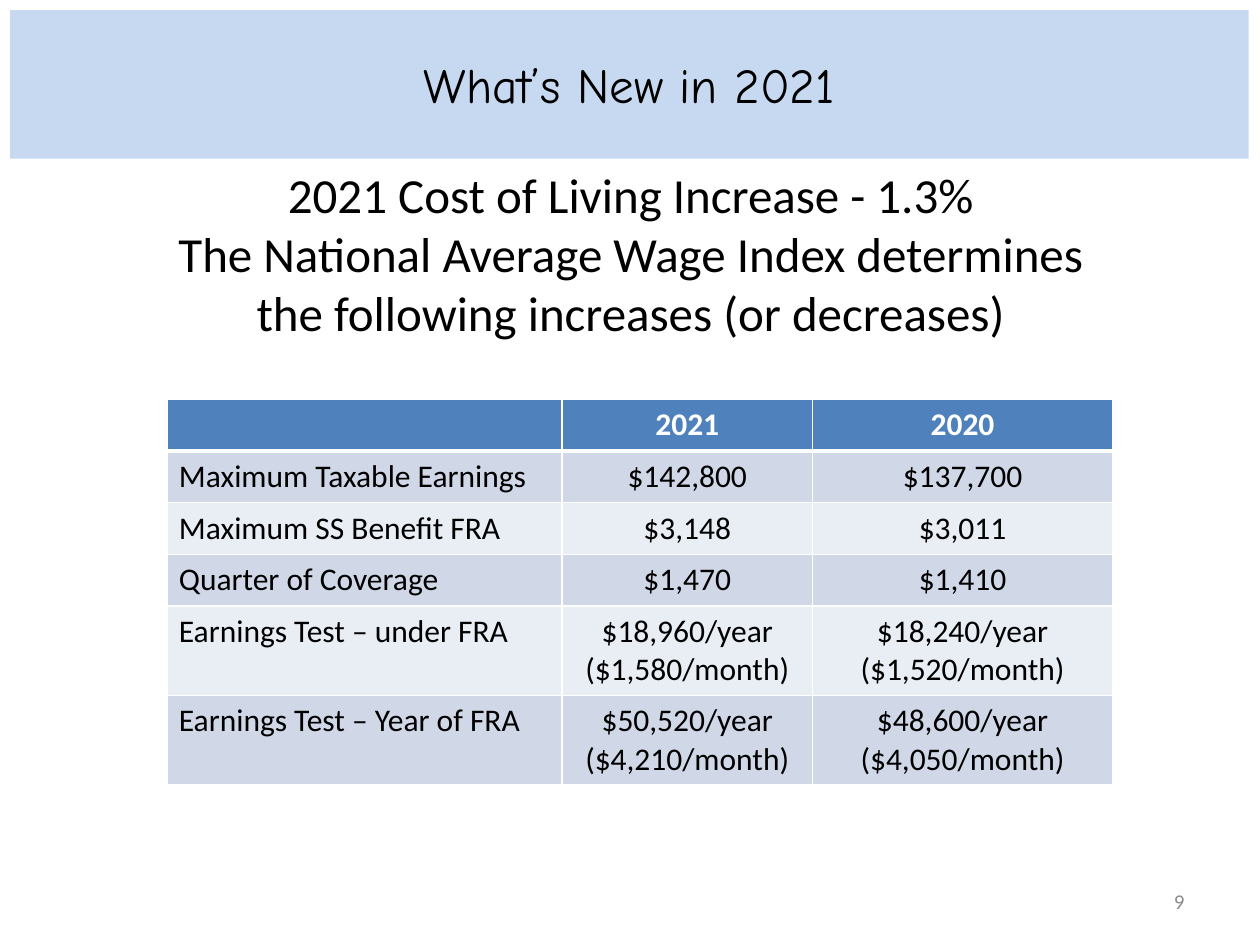
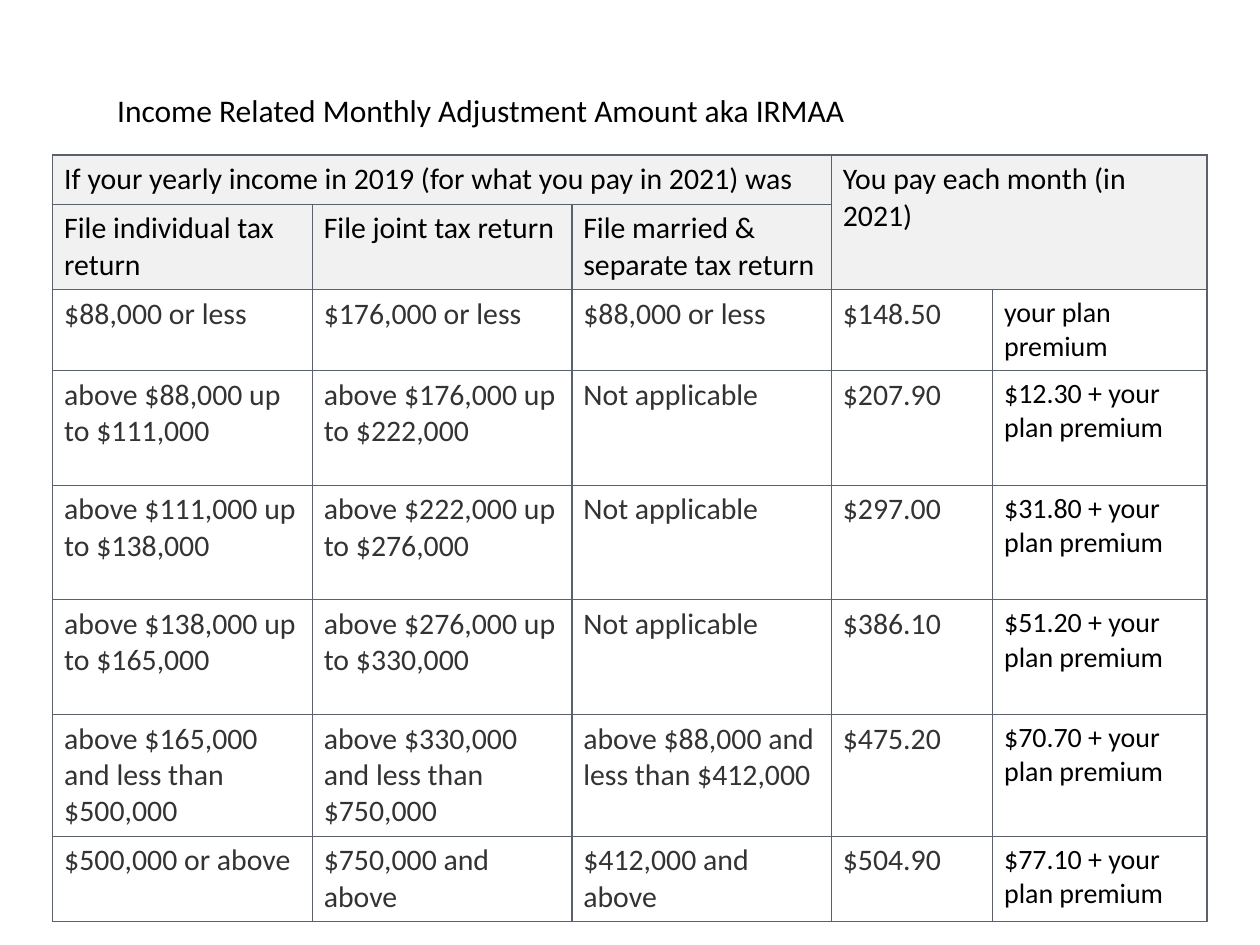
"""Build two slides on yearly benefit changes and income related premiums."""
from dataclasses import dataclass

from lxml.etree import SubElement
from pptx import Presentation
from pptx.dml.color import RGBColor as RGB
from pptx.enum.text import MSO_ANCHOR as Anchor, MSO_AUTO_SIZE as Auto, PP_ALIGN as Align
from pptx.oxml.ns import qn
from pptx.util import Inches, Pt

RATES = [
    ("", "2021", "2020"),
    ("Maximum Taxable Earnings", "$142,800", "$137,700"),
    ("Maximum SS Benefit FRA", "$3,148", "$3,011"),
    ("Quarter of Coverage", "$1,470", "$1,410"),
    ("Earnings Test – under FRA", "$18,960/year\n($1,580/month)", "$18,240/year\n($1,520/month)"),
    ("Earnings Test – Year of FRA", "$50,520/year\n($4,210/month)", "$48,600/year\n($4,050/month)"),
]
INTRO = """2021 Cost of Living Increase - 1.3%
The National Average Wage Index determines
the following increases (or decreases)"""

PLAN = "your plan premium"
INCOME = [
    ("If your yearly income in 2019 (for what you pay in 2021) was", "", "",
     "You pay each month (in 2021)", ""),
    ("File individual tax return", "File joint tax return",
     "File married & separate tax return", "", ""),
    ("$88,000 or less", "$176,000 or less", "$88,000 or less", "$148.50", PLAN),
    ("above $88,000 up to $111,000", "above $176,000 up to $222,000",
     "Not applicable", "$207.90", f"$12.30 + {PLAN}"),
    ("above $111,000 up to $138,000", "above $222,000 up to $276,000",
     "Not applicable", "$297.00", f"$31.80 + {PLAN}"),
    ("above $138,000 up to $165,000", "above $276,000 up to $330,000",
     "Not applicable", "$386.10", f"$51.20 + {PLAN}"),
    ("above $165,000 and less than $500,000", "above $330,000 and less than $750,000",
     "above $88,000 and less than $412,000", "$475.20", f"$70.70 + {PLAN}"),
    ("$500,000 or above", "$750,000 and above", "$412,000 and above",
     "$504.90", f"$77.10 + {PLAN}"),
]


@dataclass(frozen=True)
class Theme:
    """Colours, fonts and type sizes."""
    body: str = "Calibri"
    fancy: str = "Comic Neue"
    ink: str = "000000"
    soft: str = "333333"
    gray: str = "8C8C8C"
    white: str = "FFFFFF"
    band: str = "C6D9F1"
    head: str = "4F81BD"
    odd: str = "D0D8E8"
    even: str = "E9EDF4"
    pale: str = "F1F1F1"
    rule: str = "5B616B"
    big: int = 28
    text: int = 18
    dense: int = 17
    small: int = 16
    note: int = 12


T = Theme()


def write(frame, text, size=T.text, color=T.ink, align=Align.LEFT, font=T.body, bold=False):
    """Fill a text frame with evenly styled paragraphs."""
    frame.text = text
    for para in frame.paragraphs:
        para.alignment = align
        face = para.font
        face.name, face.size, face.bold = font, Pt(size), bold
        face.color.rgb = RGB.from_string(color)


def place(shape, box, anchor=Anchor.TOP):
    """Set the bounds of a shape and how its text sits."""
    shape.left, shape.top, shape.width, shape.height = map(Inches, box)
    frame = shape.text_frame
    frame.word_wrap, frame.auto_size = True, Auto.NONE
    frame.vertical_anchor = anchor
    return frame


def label(slide, box, anchor=Anchor.TOP):
    """Add a text box and return its frame."""
    return place(slide.shapes.add_textbox(0, 0, 0, 0), box, anchor)


def edge(cell, color, **widths):
    """Draw the four borders of a cell, widths given in points by side."""
    props = cell._tc.get_or_add_tcPr()
    for spot, side in enumerate("LRTB"):
        line = SubElement(props, qn(f"a:ln{side}"), w=str(Pt(widths[side])))
        fill = SubElement(line, qn("a:solidFill"))
        SubElement(fill, qn("a:srgbClr"), val=color)
        props.insert(spot, line)


def grid(slide, data, left, top, cols, rows):
    """Add a plain table and yield each cell with its place and text."""
    size = map(Inches, (left, top, sum(cols), sum(rows)))
    table = slide.shapes.add_table(len(rows), len(cols), *size).table
    table.first_row = table.horz_banding = False
    for col, width in zip(table.columns, cols):
        col.width = Inches(width)
    for row, height in zip(table.rows, rows):
        row.height = Inches(height)
    for r, line in enumerate(data):
        for c, text in enumerate(line):
            cell = table.cell(r, c)
            cell.margin_left = cell.margin_right = Inches(0.09)
            yield table, cell, r, c, text


def paint(shape, color):
    """Give a shape or cell a solid fill."""
    shape.fill.solid()
    shape.fill.fore_color.rgb = RGB.from_string(color)


def news(slide):
    """Lay out the slide of yearly changes."""
    title = slide.shapes.title
    paint(title, T.band)
    frame = place(title, (0.08, 0.08, 9.83, 1.18), Anchor.MIDDLE)
    write(frame, "What’s New in 2021", T.big, align=Align.CENTER, font=T.fancy)
    write(label(slide, (0.92, 1.26, 8.17, 3.94)), INTRO, T.big, align=Align.CENTER)
    write(label(slide, (7.17, 6.95, 2.33, 0.4), Anchor.MIDDLE), "9", T.note, T.gray, Align.RIGHT)
    rows = [0.41] * 4 + [0.7] * 2
    for _, cell, r, c, text in grid(slide, RATES, 1.33, 3.17, (3.13, 1.99, 2.38), rows):
        top = r == 0
        paint(cell, T.head if top else (T.even, T.odd)[r % 2])
        edge(cell, T.white, L=1, R=1, T=3 if r == 1 else 1, B=3 if top else 1)
        write(cell.text_frame, text, color=T.white if top else T.ink,
              align=Align.CENTER if c else Align.LEFT, bold=top)


def irmaa(slide):
    """Lay out the slide of premiums by income."""
    cols = (2.06, 2.06, 2.06, 1.28, 1.7)
    rows = [0.39, 0.65, 0.64] + [0.91] * 3 + [0.95, 0.66]
    for table, cell, r, c, text in grid(slide, INCOME, 0.42, 1.23, cols, rows):
        top, last = r < 2, c == len(cols) - 1
        paint(cell, T.pale if top else T.white)
        edge(cell, T.rule, **dict.fromkeys("LRTB", 0.75))
        write(cell.text_frame, text, T.small if last else T.dense,
              T.ink if top or last else T.soft)
    table.cell(0, 0).merge(table.cell(0, 2))
    table.cell(0, 3).merge(table.cell(1, 4))
    frame = place(slide.shapes.title, (0.83, 0.67, 8.33, 0.71))
    write(frame, "Income Related Monthly Adjustment Amount aka IRMAA")


def main():
    """Build and save the deck."""
    deck = Presentation()
    deck.slide_width, deck.slide_height = Inches(10), Inches(7.5)
    for build in (news, irmaa):
        build(deck.slides.add_slide(deck.slide_layouts[5]))
    deck.save("out.pptx")


if __name__ == "__main__":
    main()
